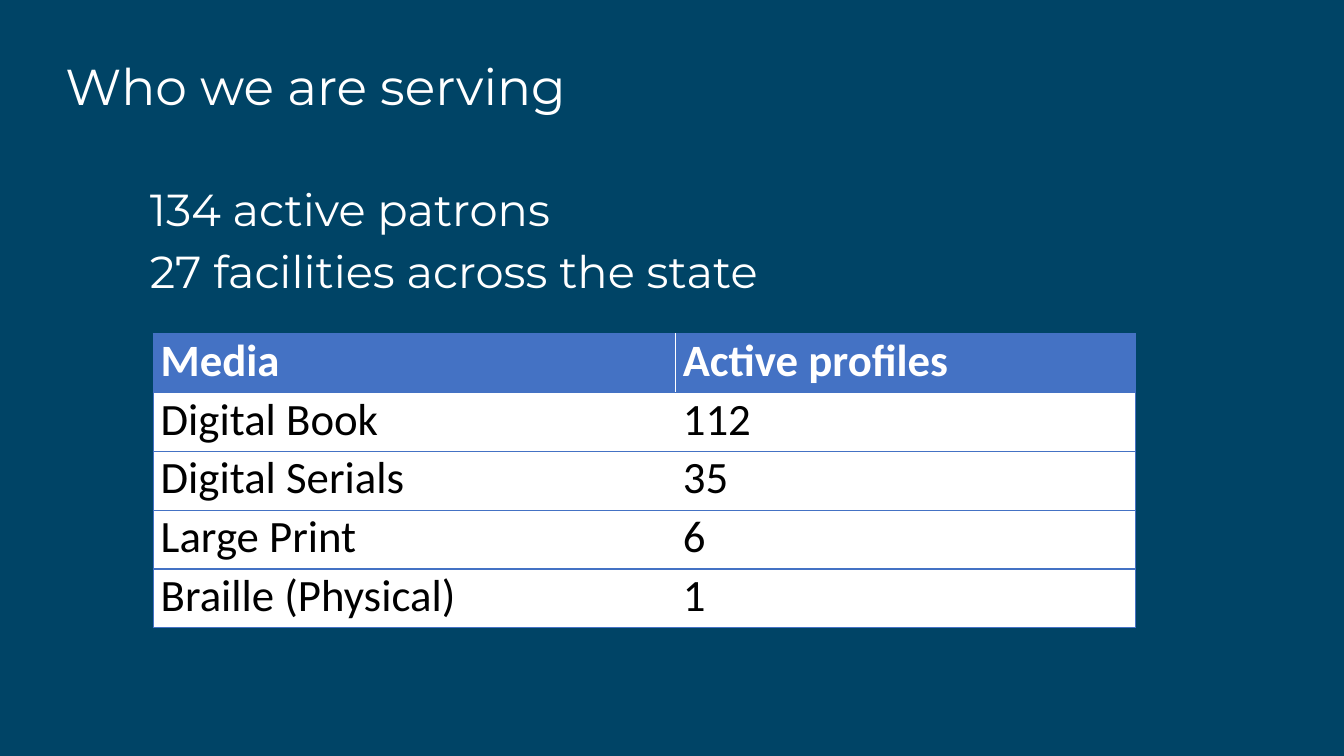
from pptx import Presentation
from pptx.dml.color import RGBColor
from pptx.enum import text
from pptx.oxml import parse_xml
from pptx.oxml.ns import nsdecls
from pptx.util import Pt

HUES = {"back": "004466", "head": "4472C4", "white": "FFFFFF", "black": "000000"}
ROWS = [
    ("Media", "Active profiles"),
    ("Digital Book", "112"),
    ("Digital Serials", "35"),
    ("Large Print", "6"),
    ("Braille (Physical)", "1"),
]
WIDTHS = (373, 329)
ROW = 42.05


def hue(name):
    return RGBColor.from_string(HUES[name])


def paint(fill, name):
    fill.solid()
    fill.fore_color.rgb = hue(name)


def style(font, color, **form):
    for key, value in form.items():
        setattr(font, key, value)
    font.color.rgb = hue(color)


def add_text(slide, box, lines, size):
    frame = slide.shapes.add_textbox(*map(Pt, box)).text_frame
    frame.word_wrap = True
    frame.vertical_anchor = text.MSO_ANCHOR.TOP
    for i, line in enumerate(lines):
        para = frame.add_paragraph() if i else frame.paragraphs[0]
        para.line_spacing = 0.9
        para.space_before = Pt(10 if i else 0)
        run = para.add_run()
        run.text = line
        style(run.font, "white", name="Montserrat", size=Pt(size))


def add_edge(cell, side):
    props = cell._tc.get_or_add_tcPr()
    props.append(parse_xml(
        f'<a:ln{side} {nsdecls("a")} w="{Pt(1)}"><a:solidFill>'
        f'<a:srgbClr val="{HUES["head"]}"/></a:solidFill></a:ln{side}>'))


def fill_cell(cell, words, head, sides):
    margins = {"left": 5.4, "right": 5.4, "top": 0, "bottom": 0}
    for side, gap in margins.items():
        setattr(cell, f"margin_{side}", Pt(gap))
    for side in sides:
        add_edge(cell, side)
    paint(cell.fill, "head" if head else "white")
    run = cell.text_frame.paragraphs[0].add_run()
    run.text = words
    style(run.font, "white" if head else "black",
          name="Calibri", size=Pt(32), bold=head)


def add_grid(slide, left, top):
    box = (left, top, sum(WIDTHS), ROW * len(ROWS))
    table = slide.shapes.add_table(len(ROWS), len(WIDTHS), *map(Pt, box)).table
    table.horz_banding = False
    for col, width in zip(table.columns, WIDTHS):
        col.width = Pt(width)
    for r, row in enumerate(ROWS):
        table.rows[r].height = Pt(ROW)
        for c, words in enumerate(row):
            fill_cell(table.cell(r, c), words, r == 0, "RTB" if c else "LTB")


def main():
    deck = Presentation()
    deck.slide_width, deck.slide_height = Pt(960), Pt(540)
    slide = deck.slides.add_slide(deck.slide_layouts[6])
    paint(slide.background.fill, "back")
    add_text(slide, (100, 130.3, 772, 306.7),
             ["134 active patrons", "27 facilities across the state"], 32)
    add_text(slide, (39.6, 41, 772, 52), ["Who we are serving"], 36)
    add_grid(slide, 109.4, 238.3)
    deck.save("out.pptx")


if __name__ == "__main__":
    main()
